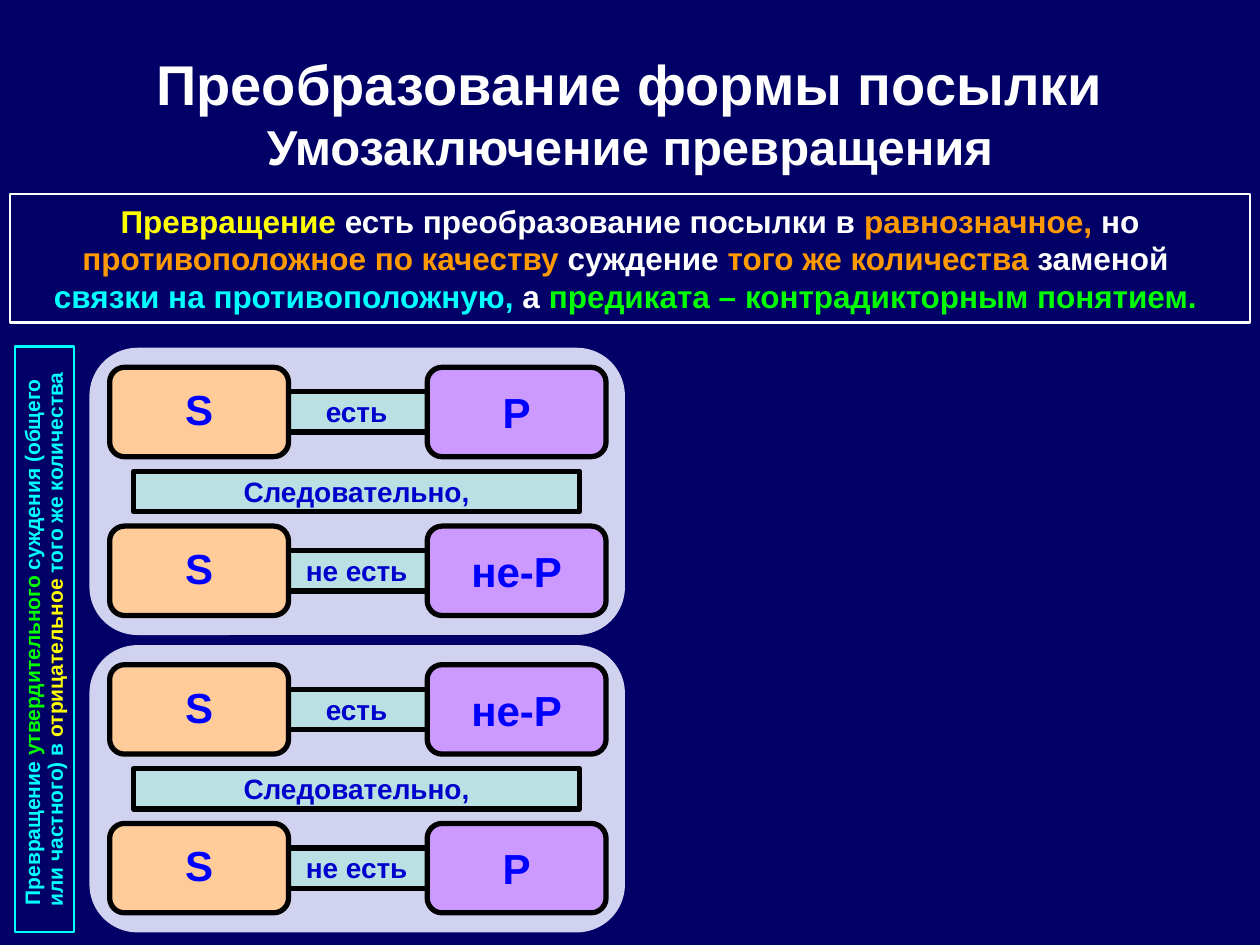
from pptx import Presentation
from pptx.dml.color import RGBColor
from pptx.enum.shapes import MSO_SHAPE
from pptx.enum.text import MSO_ANCHOR, PP_ALIGN
from pptx.util import Inches, Pt

# Colours, type sizes and line widths
THEME = {
    "font": "Arial",
    "navy": "000066", "white": "FFFFFF", "black": "000000",
    "panel": "D1D1F0", "peach": "FFCC99", "violet": "CC99FF", "mint": "BBE0E3",
    "blue": "0000FF", "ink": "0000CC", "cyan": "00FFFF", "green": "00FF00",
    "yellow": "FFFF00", "orange": "FF9900",
    "title": 32, "sub": 28, "body": 18, "term": 24, "link": 16, "side": 12,
    "thick": 3, "thin": 1.25,
}

deck = Presentation()
deck.slide_width, deck.slide_height = Inches(10), Inches(7.5)
COL, ROW = deck.slide_width / 100, deck.slide_height / 75  # grid of 100 by 75
slide = deck.slides.add_slide(deck.slide_layouts[6])
slide.background.fill.solid()
slide.background.fill.fore_color.rgb = RGBColor.from_string(THEME["navy"])


def block(x, y, w, h, fill=None, line=None, width="thick", round=None):
    """Draw a box on the grid; round is the share of the corner radius."""
    kind = MSO_SHAPE.ROUNDED_RECTANGLE if round else MSO_SHAPE.RECTANGLE
    box = slide.shapes.add_shape(
        kind, int(x * COL), int(y * ROW), int(w * COL), int(h * ROW))
    box.shadow.inherit = False
    if round:
        box.adjustments[0] = round
    if fill:
        box.fill.solid()
        box.fill.fore_color.rgb = RGBColor.from_string(THEME[fill])
    else:
        box.fill.background()
    if line:
        box.line.color.rgb = RGBColor.from_string(THEME[line])
        box.line.width = Pt(THEME[width])
    else:
        box.line.fill.background()
    return box


def write(box, *lines, size, wrap=True, space=None, inset=(1, 0.5, 1, 0.5)):
    """Fill a box with lines, each a list of (text, colour[, size]) runs."""
    frame = box.text_frame
    frame.word_wrap = wrap
    frame.vertical_anchor = MSO_ANCHOR.MIDDLE
    left, top, right, low = inset
    frame.margin_left, frame.margin_right = int(left * COL), int(right * COL)
    frame.margin_top, frame.margin_bottom = int(top * ROW), int(low * ROW)
    para = frame.paragraphs[0]
    para.alignment = PP_ALIGN.CENTER
    if space:
        para.line_spacing = space
    for i, line in enumerate(lines):
        if i:
            para.add_line_break()
        for text, hue, *own in line:
            run = para.add_run()
            run.text = text
            run.font.name, run.font.bold = THEME["font"], True
            run.font.size = Pt(THEME[own[0] if own else size])
            run.font.color.rgb = RGBColor.from_string(THEME[hue])


# Two schemes: premise, "therefore" bar, conclusion
SCHEMES = [
    [("есть", "P"), ("не есть", "не-P")],
    [("есть", "не-P"), ("не есть", "P")],
]
TOP, PITCH, STEP = 27.6, 23.6, 12.6
SNUG = (1, 0.4, 1, 0.5)

for i, scheme in enumerate(SCHEMES):
    top = TOP + i * PITCH
    block(7.1, top, 42.5, 22.8, fill="panel", round=0.167)
    for j, (link, term) in enumerate(scheme):
        y = top + 1.55 + j * STEP
        bar = block(22.4, y + 1.95, 11.8, 3.2, fill="mint", line="black")
        write(bar, [(link, "ink")], size="link", wrap=False, inset=SNUG)
        for x, name, fill, space in ((8.7, "S", "peach", 0.9),
                                     (33.9, term, "violet", None)):
            box = block(x, y, 14.2, 7.1, fill=fill, line="black", round=0.167)
            write(box, [(name, "blue")], size="term", wrap=False, space=space)
    bar = block(10.6, top + 9.8, 35.4, 3.2, fill="mint", line="black")
    write(bar, [("Следовательно,", "ink")], size="link", wrap=False, inset=SNUG)

# Title
write(block(5, 3, 90, 11.8),
      [("Преобразование формы посылки", "white")],
      [("Умозаключение превращения", "white", "sub")], size="title")

# Side label, turned to read upwards
side = block(-19.7, 48.4, 46.5, 4.7, line="cyan", width="thin")
side.rotation = 270
write(side,
      [("Превращение ", "cyan"), ("утвердительного", "green"),
       (" суждения (общего ", "cyan")],
      [("или частного) в ", "cyan"), ("отрицательное", "yellow"),
       (" того же количества", "cyan")],
      size="side", space=0.9, inset=(0.4, 0.5, 0.4, 0.5))

# Definition
write(block(0.8, 15.4, 98.4, 10.2, line="white", width="thin"),
      [("Превращение ", "yellow"), ("есть преобразование посылки в ", "white"),
       ("равнозначное,", "orange"), (" но ", "white"),
       ("противоположное по качеству", "orange"), (" суждение ", "white"),
       ("того же количества ", "orange"), ("заменой ", "white")],
      [("связки на противоположную,", "cyan"), (" а ", "white"),
       ("предиката – контрадикторным понятием. ", "green")],
      size="body")

deck.save("out.pptx")
